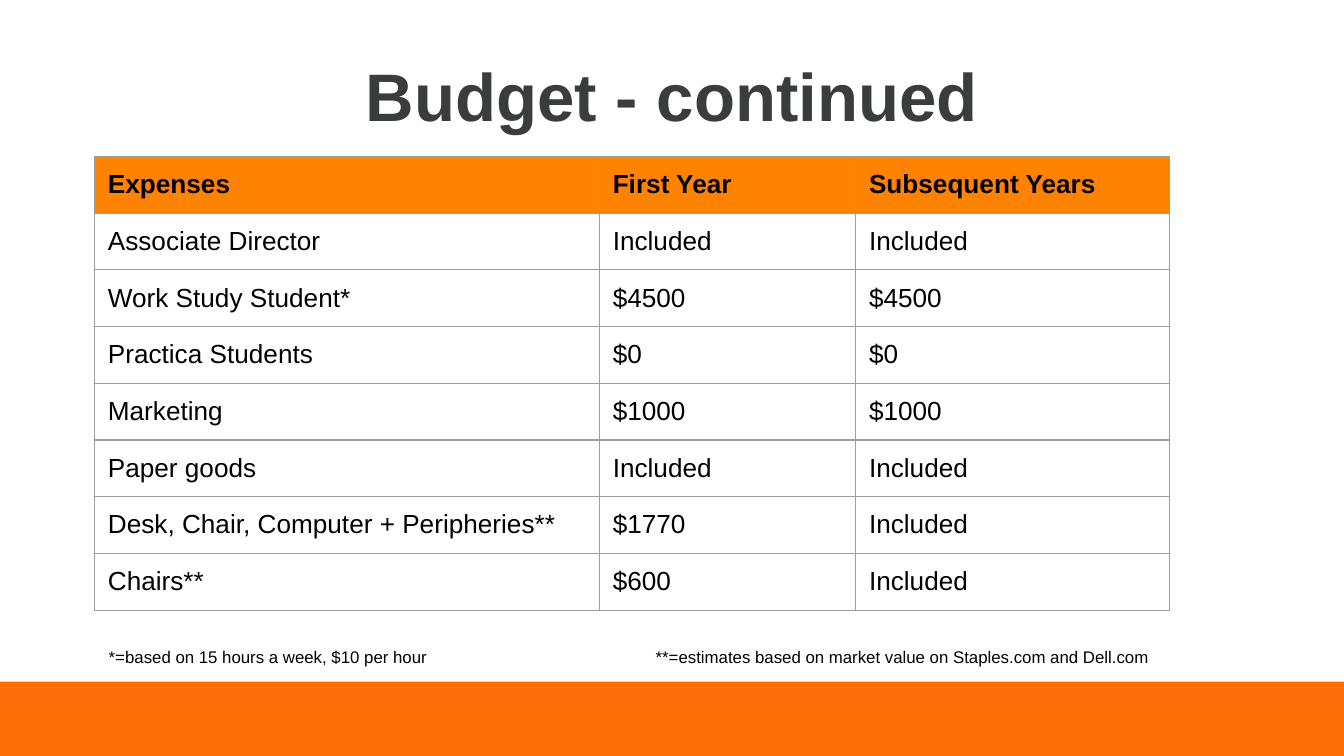
"""Build the continued budget slide with its expense table and footnotes."""
from dataclasses import dataclass

from lxml.etree import SubElement
from pptx import Presentation
from pptx.dml.color import RGBColor
from pptx.enum.shapes import MSO_SHAPE
from pptx.enum.text import MSO_ANCHOR, PP_ALIGN
from pptx.oxml import parse_xml
from pptx.oxml.ns import nsdecls, qn
from pptx.slide import Slide
from pptx.util import Length, Pt

FONT = "Arial"
BLACK = RGBColor(0x00, 0x00, 0x00)
CHARCOAL = RGBColor(0x3B, 0x3C, 0x3E)
HEADER_ORANGE = RGBColor(0xFF, 0x82, 0x00)
BAND_ORANGE = RGBColor(0xFD, 0x6D, 0x08)
BORDER_GREY = RGBColor(0x9E, 0x9E, 0x9E)

SLIDE_WIDTH, SLIDE_HEIGHT = Pt(720), Pt(405)
BAND_TOP = Pt(365.25)
INSET = Pt(7.2)
BORDER_WIDTH = Pt(0.75)
ROW_HEIGHT = Pt(30.4)
COLUMN_WIDTHS = (Pt(270.5), Pt(137.3), Pt(168))
HEADINGS = ("Expenses", "First Year", "Subsequent Years")


@dataclass(frozen=True)
class Expense:
    item: str
    first_year: str
    later_years: str = "Included"


EXPENSES = (
    Expense("Associate Director", "Included"),
    Expense("Work Study Student*", "$4500", "$4500"),
    Expense("Practica Students", "$0", "$0"),
    Expense("Marketing", "$1000", "$1000"),
    Expense("Paper goods", "Included"),
    Expense("Desk, Chair, Computer + Peripheries**", "$1770"),
    Expense("Chairs**", "$600"),
)
FOOTNOTES = (
    "*=based on 15 hours a week, $10 per hour",
    "**=estimates based on market value on Staples.com and Dell.com",
)


def set_font(paragraph, size: Length, color: RGBColor, bold: bool = False) -> None:
    font = paragraph.font
    font.name, font.size, font.bold = FONT, size, bold
    font.color.rgb = color


def set_insets(frame) -> None:
    frame.margin_left = frame.margin_right = INSET
    frame.margin_top = frame.margin_bottom = INSET


def add_borders(cell) -> None:
    properties = cell._tc.get_or_add_tcPr()
    for position, side in enumerate(("lnL", "lnR", "lnT", "lnB")):
        properties.insert(position, parse_xml(
            f'<a:{side} {nsdecls("a")} w="{BORDER_WIDTH}"><a:solidFill>'
            f'<a:srgbClr val="{BORDER_GREY}"/></a:solidFill></a:{side}>'))


def fill_cell(cell, wording: str, heading: bool) -> None:
    cell.text = wording
    set_insets(cell)
    set_font(cell.text_frame.paragraphs[0], Pt(14), BLACK, heading)
    if heading:
        cell.fill.solid()
        cell.fill.fore_color.rgb = HEADER_ORANGE
    else:
        cell.fill.background()
    add_borders(cell)


def add_band(slide: Slide) -> None:
    band = slide.shapes.add_shape(
        MSO_SHAPE.RECTANGLE, 0, BAND_TOP, SLIDE_WIDTH, SLIDE_HEIGHT - BAND_TOP)
    band.shadow.inherit = False
    band.fill.solid()
    band.fill.fore_color.rgb = BAND_ORANGE
    band.line.fill.background()


def add_title(slide: Slide) -> None:
    title = slide.shapes.title
    title.left, title.top, title.width, title.height = Pt(36), Pt(16.5), Pt(648), Pt(68)
    frame = title.text_frame
    frame.text = "Budget - continued"
    frame.vertical_anchor = MSO_ANCHOR.MIDDLE
    set_insets(frame)
    heading = frame.paragraphs[0]
    heading.alignment = PP_ALIGN.CENTER
    set_font(heading, Pt(36), CHARCOAL, bold=True)


def add_budget(slide: Slide) -> None:
    rows = [HEADINGS] + [(e.item, e.first_year, e.later_years) for e in EXPENSES]
    budget = slide.shapes.add_table(
        len(rows), len(HEADINGS), Pt(50.6), Pt(83.8),
        sum(COLUMN_WIDTHS), ROW_HEIGHT * len(rows)).table
    budget.horz_banding = False
    for column, width in zip(budget.columns, COLUMN_WIDTHS):
        column.width = width
    for row_index, wordings in enumerate(rows):
        budget.rows[row_index].height = ROW_HEIGHT
        for column_index, wording in enumerate(wordings):
            fill_cell(budget.cell(row_index, column_index), wording, row_index == 0)


def add_footnotes(slide: Slide) -> None:
    frame = slide.shapes.add_textbox(Pt(51.2), Pt(341.3), Pt(576), Pt(25)).text_frame
    frame.word_wrap = True
    set_insets(frame)
    notes = frame.paragraphs[0]
    notes.text = "\t".join(FOOTNOTES)
    tabs = SubElement(notes._p.get_or_add_pPr(), qn("a:tabLst"))
    SubElement(tabs, qn("a:tab"), pos=str(Pt(293)), algn="l")
    set_font(notes, Pt(9), BLACK)


def main() -> None:
    presentation = Presentation()
    presentation.slide_width, presentation.slide_height = SLIDE_WIDTH, SLIDE_HEIGHT
    slide = presentation.slides.add_slide(presentation.slide_layouts[5])
    add_band(slide)
    add_title(slide)
    add_budget(slide)
    add_footnotes(slide)
    presentation.save("out.pptx")


if __name__ == "__main__":
    main()
